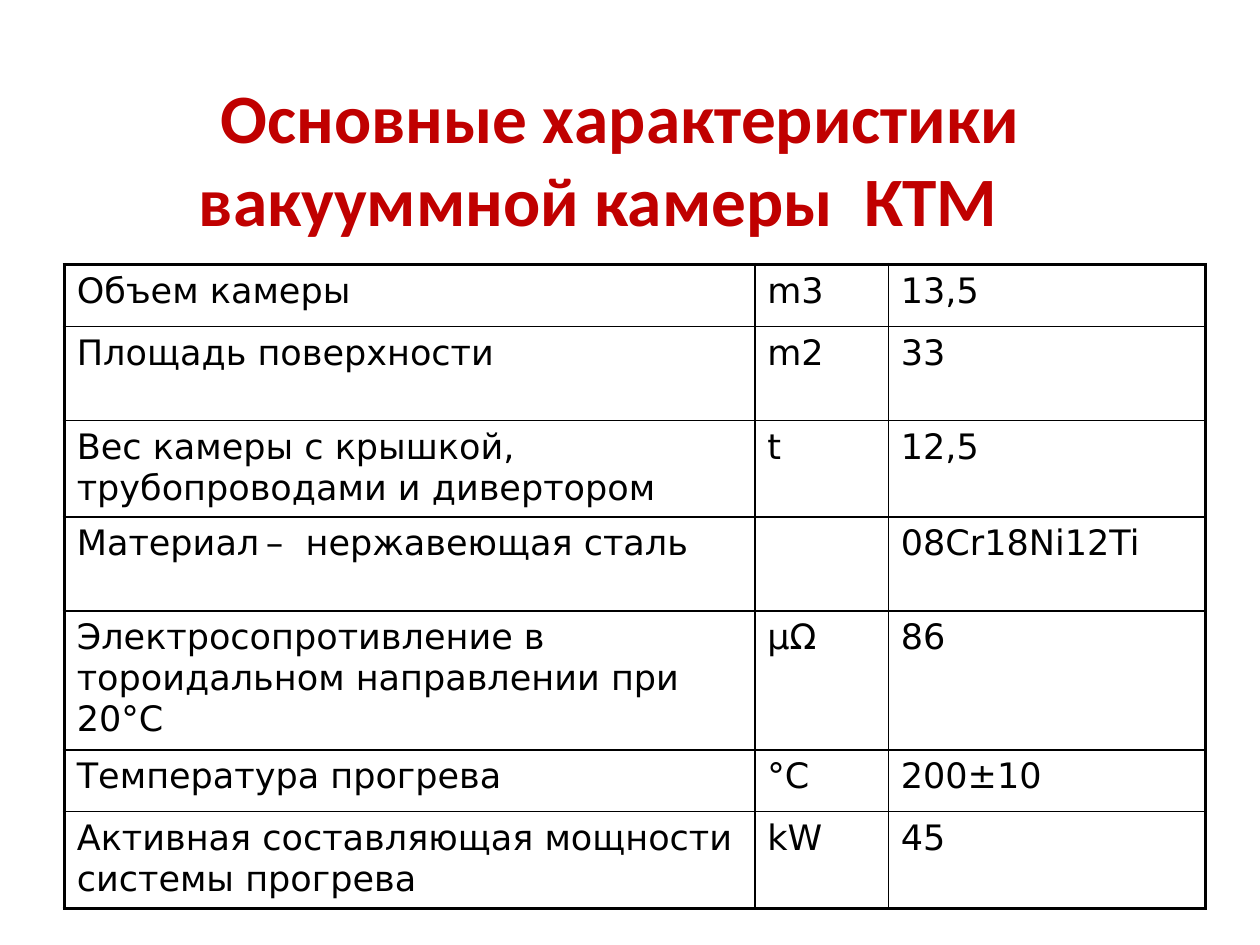
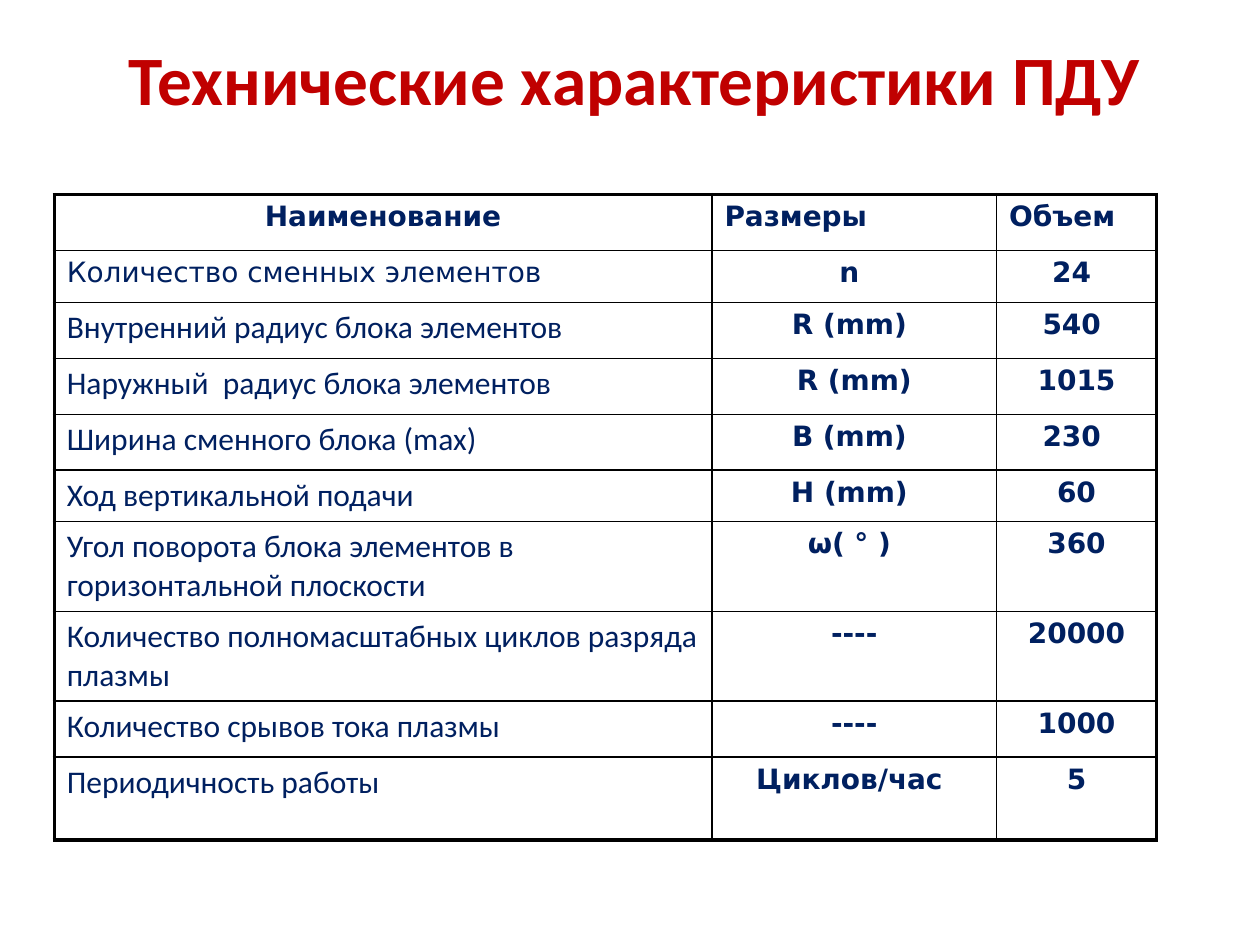
from pptx import Presentation
from pptx.dml.color import RGBColor
from pptx.enum.text import MSO_ANCHOR, PP_ALIGN
from pptx.oxml.ns import qn
from pptx.util import Pt
from lxml import etree

LEFT, CENTER = PP_ALIGN.LEFT, PP_ALIGN.CENTER
MIDDLE = MSO_ANCHOR.MIDDLE

# Shared style
RED, NAVY, BLACK = "C00000", "002060", "000000"
TITLE_FONT, TABLE_FONT = "Calibri", "DejaVu Sans"
TITLE_SIZE = 39.6
OUTER_LINE, INNER_LINE = 2.25, 1


def write(frame, text, font, size, color, bold=False, align=LEFT):
    para = frame.paragraphs[0]
    para.alignment = align
    span = para.add_run()
    span.text = text
    span.font.name = font
    span.font.size = Pt(size)
    span.font.bold = bold
    span.font.color.rgb = RGBColor.from_string(color)


def set_border(cell, side, width):
    line = etree.SubElement(cell._tc.get_or_add_tcPr(), qn("a:ln" + side), w=str(Pt(width)))
    fill = etree.SubElement(line, qn("a:solidFill"))
    etree.SubElement(fill, qn("a:srgbClr"), val=BLACK)


# Cell styles: font, size, colour, bold, alignment
CHAMBER = (TABLE_FONT, 20, BLACK, False, LEFT)
HEAD = (TABLE_FONT, 16, NAVY, True, LEFT)
HEAD_CENTERED = (TABLE_FONT, 16, NAVY, True, CENTER)
FIRST_NAME = (TABLE_FONT, 16, NAVY, False, LEFT)
NAME = (TITLE_FONT, 18, NAVY, False, LEFT)

# Chamber table: row height and cell texts
chamber_rows = [
    (35.4, "Объем камеры", "m3", "13,5"),
    (53.7, "Площадь поверхности", "m2", "33"),
    (53.7, "Вес камеры с крышкой, трубопроводами и дивертором", "t", "12,5"),
    (53.7, "Материал\t–  нержавеющая сталь", "", "08Cr18Ni12Ti"),
    (77.1, "Электросопротивление в тороидальном направлении при 20°C", "μΩ", "86"),
    (35.4, "Температура прогрева", "°C", "200±10"),
    (53.7, "Активная составляющая мощности системы прогрева", "kW", "45"),
]
chamber_styles = [[CHAMBER] * 3] * len(chamber_rows)

# Divertor table: row height and cell texts
divertor_rows = [
    (32, "Наименование", "Размеры", "Объем"),
    (29.6, "Количество сменных элементов", "n ", "24 "),
    (32, "Внутренний радиус блока элементов", "R (mm) ", "540 "),
    (32, "Наружный  радиус блока элементов", "R (mm)", "1015"),
    (32, "Ширина сменного блока (max)", "B (mm) ", "230 "),
    (29.4, "Ход вертикальной подачи", "H (mm) ", "60"),
    (51.3, "Угол поворота блока элементов в горизонтальной плоскости", "ω( ° ) ", "360"),
    (51.3, "Количество полномасштабных циклов разряда плазмы", "----", "20000"),
    (32, "Количество срывов тока плазмы", "----", "1000"),
    (47.4, "Периодичность работы", "Циклов/час ", "5"),
]
divertor_styles = [[HEAD_CENTERED, HEAD, HEAD], [FIRST_NAME, HEAD_CENTERED, HEAD_CENTERED]]
divertor_styles += [[NAME, HEAD_CENTERED, HEAD_CENTERED]] * (len(divertor_rows) - 2)

# Pages: title, title place, table corner, column widths, rows, styles
pages = [
    ("\tОсновные характеристики \tвакууммной камеры  КТМ", (0, 56.2, 684, 67.7),
     (36.7, 151.2), (394.6, 76.3, 181.4), chamber_rows, chamber_styles),
    ("Технические характеристики ПДУ", (36, 0, 653, 88.6),
     (31, 111.2), (375.8, 162.7, 91.4), divertor_rows, divertor_styles),
]

deck = Presentation()
deck.slide_width, deck.slide_height = Pt(720), Pt(540)

for title, title_place, corner, widths, rows, styles in pages:
    page = deck.slides.add_slide(deck.slide_layouts[6])

    # Title
    box = page.shapes.add_textbox(*[Pt(length) for length in title_place])
    box.text_frame.word_wrap = True
    box.text_frame.vertical_anchor = MIDDLE
    write(box.text_frame, title, TITLE_FONT, TITLE_SIZE, RED, True, CENTER)

    # Table grid
    heights = [row[0] for row in rows]
    table = page.shapes.add_table(
        len(rows), len(widths), Pt(corner[0]), Pt(corner[1]),
        Pt(sum(widths)), Pt(sum(heights))).table
    table.first_row = table.horz_banding = False
    for column, width in zip(table.columns, widths):
        column.width = Pt(width)
    for table_row, height in zip(table.rows, heights):
        table_row.height = Pt(height)

    # Cells: thick line on the outside, thin lines inside
    for r, (height, *texts) in enumerate(rows):
        for c, text in enumerate(texts):
            cell = table.cell(r, c)
            edges = {"L": c == 0, "R": c == len(widths) - 1,
                     "T": r == 0, "B": r == len(rows) - 1}
            for side, outside in edges.items():
                set_border(cell, side, OUTER_LINE if outside else INNER_LINE)
            cell.fill.background()
            if text:
                write(cell.text_frame, text, *styles[r][c])

deck.save("out.pptx")
